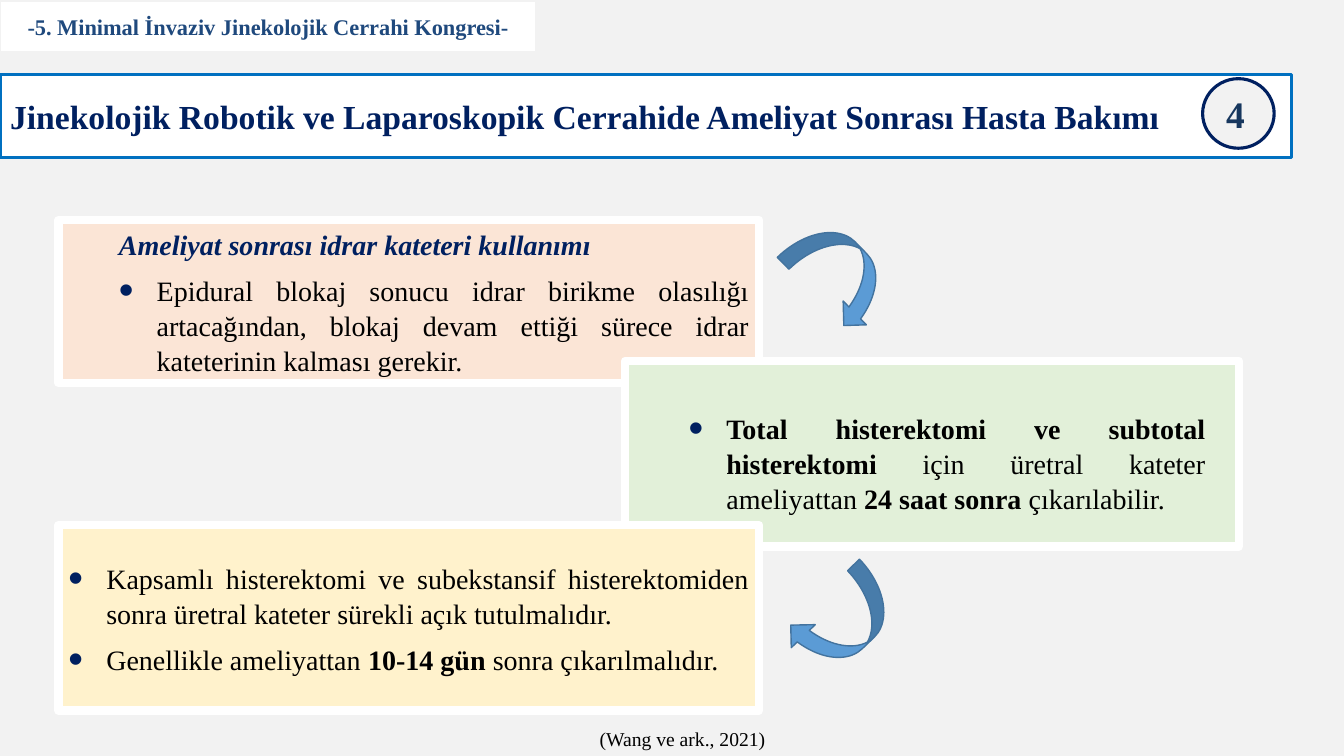
from dataclasses import dataclass

from lxml.etree import SubElement
from pptx import Presentation
from pptx.dml.color import RGBColor
from pptx.enum.shapes import MSO_SHAPE as Preset
from pptx.enum.text import MSO_ANCHOR as Anchor, MSO_AUTO_SIZE as AutoSize, PP_ALIGN as Align
from pptx.oxml.ns import qn
from pptx.util import Pt


@dataclass(frozen=True)
class Theme:
    font: str = "Times New Roman"
    page: str = "F2F2F2"
    white: str = "FFFFFF"
    black: str = "000000"
    navy: str = "002060"
    congress: str = "1F497D"
    number: str = "17375E"
    bar_line: str = "0070C0"
    arrow: str = "5B9BD5"
    arrow_line: str = "43739E"
    peach: str = "FBE5D6"
    green: str = "E2F0D9"
    yellow: str = "FFF2CC"
    title_size: float = 24
    number_size: float = 26.7
    body_size: float = 20
    congress_size: float = 16
    citation_size: float = 14


THEME = Theme()

# Content
CONGRESS = "-5. Minimal İnvaziv Jinekolojik Cerrahi Kongresi-"
TITLE = "Jinekolojik Robotik ve Laparoskopik Cerrahide Ameliyat Sonrası Hasta Bakımı"
NUMBER = "4"
CITATION = "(Wang ve ark., 2021)"

# Each card: box, fill, insets (left, top, right, bottom), text indent, heading,
# and bullets made of (text, bold) pieces
CARDS = [
    dict(box=(41.8, 157, 500.4, 116.6), fill=THEME.peach, insets=(7.2, 7.2, 7.2, 7.2), indent=36,
         heading="Ameliyat sonrası idrar kateteri kullanımı",
         bullets=[[("Epidural blokaj sonucu idrar birikme olasılığı artacağından, blokaj devam "
                    "ettiği sürece idrar kateterinin kalması gerekir.", False)]]),
    dict(box=(446.4, 257.8, 438.5, 132.5), fill=THEME.green, insets=(45.4, 27.4, 23.8, 15.1),
         indent=0, heading=None,
         bullets=[[("Total histerektomi ve subtotal histerektomi ", True),
                   ("için üretral kateter ameliyattan ", False),
                   ("24 saat sonra ", True), ("çıkarılabilir.", False)]]),
    dict(box=(41.8, 375.1, 500.4, 132.5), fill=THEME.yellow, insets=(7.2, 7.2, 7.2, 7.2),
         indent=0, heading=None,
         bullets=[[("Kapsamlı histerektomi ve subekstansif histerektomiden sonra üretral "
                    "kateter sürekli açık tutulmalıdır.", False)],
                  [("Genellikle ameliyattan ", False), ("10-14 gün ", True),
                   ("sonra çıkarılmalıdır.", False)]]),
]
ARROWS = [((560.2, 172.1, 79.9, 47.5), 45.7), ((561.6, 420.5, 79.9, 47.5), 136.2)]
HANGING = 27


def place(box):
    return [Pt(length) for length in box]


def paint(shape, fill, line, width):
    shape.fill.solid()
    shape.fill.fore_color.rgb = RGBColor.from_string(fill)
    shape.line.color.rgb = RGBColor.from_string(line)
    shape.line.width = Pt(width)


def add_preset(slide, preset, box, fill, line, width):
    shape = slide.shapes.add_shape(preset, *place(box))
    shape.shadow.inherit = False
    paint(shape, fill, line, width)
    return shape


def style(paragraph, size, color, align, bold=False, italic=False):
    paragraph.alignment = align
    font = paragraph.font
    font.name, font.size, font.bold, font.italic = THEME.font, Pt(size), bold, italic
    font.color.rgb = RGBColor.from_string(color)


def write_line(shape, text, size, color, align, bold=True):
    frame = shape.text_frame
    frame.vertical_anchor = Anchor.MIDDLE
    frame.text = text
    style(frame.paragraphs[0], size, color, align, bold)


def set_bullet(paragraph, left):
    props = paragraph._p.get_or_add_pPr()
    props.set("marL", str(Pt(left + HANGING)))
    props.set("indent", str(-Pt(HANGING)))
    SubElement(SubElement(props, qn("a:buClr")), qn("a:srgbClr"), val=THEME.navy)
    SubElement(props, qn("a:buSzPct"), val="150000")
    SubElement(props, qn("a:buFont"), typeface="Arial")
    SubElement(props, qn("a:buChar"), char="•")


def add_card(slide, box, fill, insets, indent, heading, bullets):
    card = add_preset(slide, Preset.RECTANGLE, box, fill, THEME.white, 6)
    frame = card.text_frame
    frame.word_wrap = True
    frame.vertical_anchor = Anchor.MIDDLE
    frame.margin_left, frame.margin_top, frame.margin_right, frame.margin_bottom = place(insets)
    entries = ([[(heading, True)]] if heading else []) + bullets
    for position, pieces in enumerate(entries):
        paragraph = frame.add_paragraph() if position else frame.paragraphs[0]
        is_heading = bool(heading) and position == 0
        if is_heading:
            paragraph._p.get_or_add_pPr().set("marL", str(Pt(indent)))
        else:
            set_bullet(paragraph, indent)
        paragraph.line_spacing = 1.04
        paragraph.space_after = Pt(8)
        style(paragraph, THEME.body_size, THEME.navy if is_heading else THEME.black,
              Align.JUSTIFY, is_heading, is_heading)
        for text, bold in pieces:
            run = paragraph.add_run()
            run.text = text
            run.font.bold = bold


def main():
    deck = Presentation()
    deck.slide_width, deck.slide_height = Pt(960), Pt(540)
    slide = deck.slides.add_slide(deck.slide_layouts[5])
    slide.background.fill.solid()
    slide.background.fill.fore_color.rgb = RGBColor.from_string(THEME.page)

    # Title bar
    title = slide.shapes.title
    title.left, title.top, title.width, title.height = place((0, 53.3, 922.3, 59))
    paint(title, THEME.white, THEME.bar_line, 2.25)
    write_line(title, TITLE, THEME.title_size, THEME.navy, Align.LEFT)
    title.text_frame.auto_size = AutoSize.NONE

    # Congress strip
    strip = add_preset(slide, Preset.RECTANGLE, (0, 0.7, 383, 36), THEME.white, THEME.page, 1)
    write_line(strip, CONGRESS, THEME.congress_size, THEME.congress, Align.CENTER)

    # Number badge
    badge = add_preset(slide, Preset.OVAL, (859, 56.2, 51.1, 49.7), THEME.page, THEME.navy, 2.25)
    write_line(badge, NUMBER, THEME.number_size, THEME.number, Align.CENTER)
    badge.text_frame.margin_left = 0
    badge.text_frame.margin_right = Pt(4)

    # Overlapping cards
    for card in CARDS:
        add_card(slide, **card)

    # Arrows from card to card
    for box, turn in ARROWS:
        arrow = add_preset(slide, Preset.CURVED_DOWN_ARROW, box, THEME.arrow, THEME.arrow_line, 1)
        arrow.rotation = turn

    # Citation
    citation = slide.shapes.add_textbox(*place((421.2, 515.5, 133.9, 24.5)))
    citation.text_frame.word_wrap = False
    write_line(citation, CITATION, THEME.citation_size, THEME.black, Align.LEFT, bold=False)

    deck.save("out.pptx")


if __name__ == "__main__":
    main()
